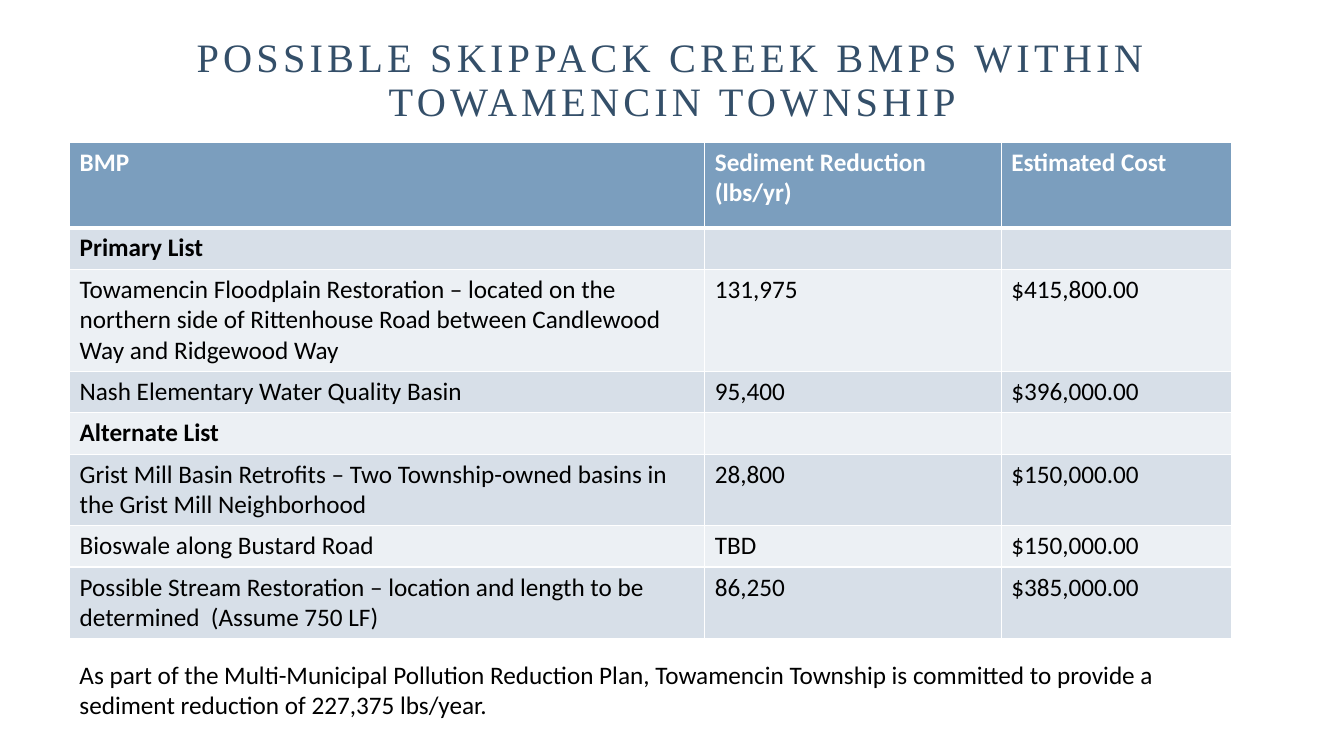
from lxml import etree
from pptx import Presentation
from pptx.dml.color import RGBColor
from pptx.enum.text import MSO_ANCHOR as Anchor, MSO_AUTO_SIZE as AutoSize, PP_ALIGN as Align
from pptx.oxml.ns import qn
from pptx.util import Inches, Pt

COLORS = {
    "title": "344F69",
    "header": "7B9EBE",
    "odd_row": "D7DFE8",
    "even_row": "ECF0F4",
    "white": "FFFFFF",
    "text": "000000",
}
TITLE = "POSSIBLE SKIPPACK CREEK BMPS WITHIN TOWAMENCIN TOWNSHIP"
ROWS = [
    ("BMP", "Sediment Reduction (lbs/yr)", "Estimated Cost"),
    ("Primary List", "", ""),
    ("Towamencin Floodplain Restoration – located on the northern side of "
     "Rittenhouse Road between Candlewood Way and Ridgewood Way", "131,975", "$415,800.00"),
    ("Nash Elementary Water Quality Basin", "95,400", "$396,000.00"),
    ("Alternate List", "", ""),
    ("Grist Mill Basin Retrofits – Two Township-owned basins in the Grist Mill Neighborhood",
     "28,800", "$150,000.00"),
    ("Bioswale along Bustard Road", "TBD", "$150,000.00"),
    ("Possible Stream Restoration – location and length to be determined  (Assume 750 LF)",
     "86,250", "$385,000.00"),
]
NOTE = ("As part of the Multi-Municipal Pollution Reduction Plan, Towamencin Township is "
        "committed to provide a sediment reduction of 227,375 lbs/year.")
COLUMN_WIDTHS = (6.3, 2.94, 2.29)
HEADER_HEIGHT, ROW_HEIGHT = 0.85, 0.41
LEFT, TABLE_TOP, NOTE_TOP = 0.69, 1.41, 6.49
TITLE_BOX = {"left": 1.48, "top": 0.35, "width": 10.38, "height": 0.94}
TITLE_FONT = {"name": "Times New Roman", "size": Pt(28.8), "bold": False}
BODY_FONT = {"name": "Calibri", "size": Pt(18), "bold": False}


def write(paragraph, text, font_values, color):
    run = paragraph.add_run()
    run.text = text
    for name, value in font_values.items():
        setattr(run.font, name, value)
    run.font.color.rgb = RGBColor.from_string(COLORS[color])
    return run


def add_borders(cell, widths):
    properties = cell._tc.get_or_add_tcPr()
    for side, width in widths.items():
        line = etree.SubElement(properties, qn(f"a:ln{side}"), w=str(Pt(width)))
        fill = etree.SubElement(line, qn("a:solidFill"))
        etree.SubElement(fill, qn("a:srgbClr"), val=COLORS["white"])


def add_title(slide):
    title = slide.shapes.title
    for name, value in TITLE_BOX.items():
        setattr(title, name, Inches(value))
    frame = title.text_frame
    frame.word_wrap = True
    frame.auto_size = AutoSize.NONE
    frame.vertical_anchor = Anchor.BOTTOM
    paragraph = frame.paragraphs[0]
    paragraph.alignment = Align.CENTER
    paragraph.line_spacing = 0.9
    run = write(paragraph, TITLE, TITLE_FONT, "title")
    run.font._element.set("spc", "300")


def add_bmp_table(slide):
    heights = [HEADER_HEIGHT] + [ROW_HEIGHT] * (len(ROWS) - 1)
    table = slide.shapes.add_table(
        len(ROWS), len(COLUMN_WIDTHS), Inches(LEFT), Inches(TABLE_TOP),
        Inches(sum(COLUMN_WIDTHS)), Inches(sum(heights))).table
    for column, width in zip(table.columns, COLUMN_WIDTHS):
        column.width = Inches(width)
    for index, (values, height) in enumerate(zip(ROWS, heights)):
        table.rows[index].height = Inches(height)
        is_header = index == 0
        is_section = not any(values[1:])
        background = "header" if is_header else "odd_row" if index % 2 else "even_row"
        font_values = {**BODY_FONT, "bold": is_header or is_section}
        borders = {"L": 1, "R": 1, "T": 3 if index == 1 else 1, "B": 3 if is_header else 1}
        for cell, value in zip(table.rows[index].cells, values):
            add_borders(cell, borders)
            cell.fill.solid()
            cell.fill.fore_color.rgb = RGBColor.from_string(COLORS[background])
            if value:
                write(cell.text_frame.paragraphs[0], value, font_values,
                      "white" if is_header else "text")


def add_note(slide):
    box = slide.shapes.add_textbox(Inches(LEFT), Inches(NOTE_TOP),
                                   Inches(sum(COLUMN_WIDTHS)), Inches(0.71))
    frame = box.text_frame
    frame.word_wrap = True
    frame.auto_size = AutoSize.SHAPE_TO_FIT_TEXT
    write(frame.paragraphs[0], NOTE, BODY_FONT, "text")


def main():
    presentation = Presentation()
    presentation.slide_width = Inches(13.33)
    presentation.slide_height = Inches(7.5)
    slide = presentation.slides.add_slide(presentation.slide_layouts[5])
    add_title(slide)
    add_bmp_table(slide)
    add_note(slide)
    presentation.save("out.pptx")


if __name__ == "__main__":
    main()
